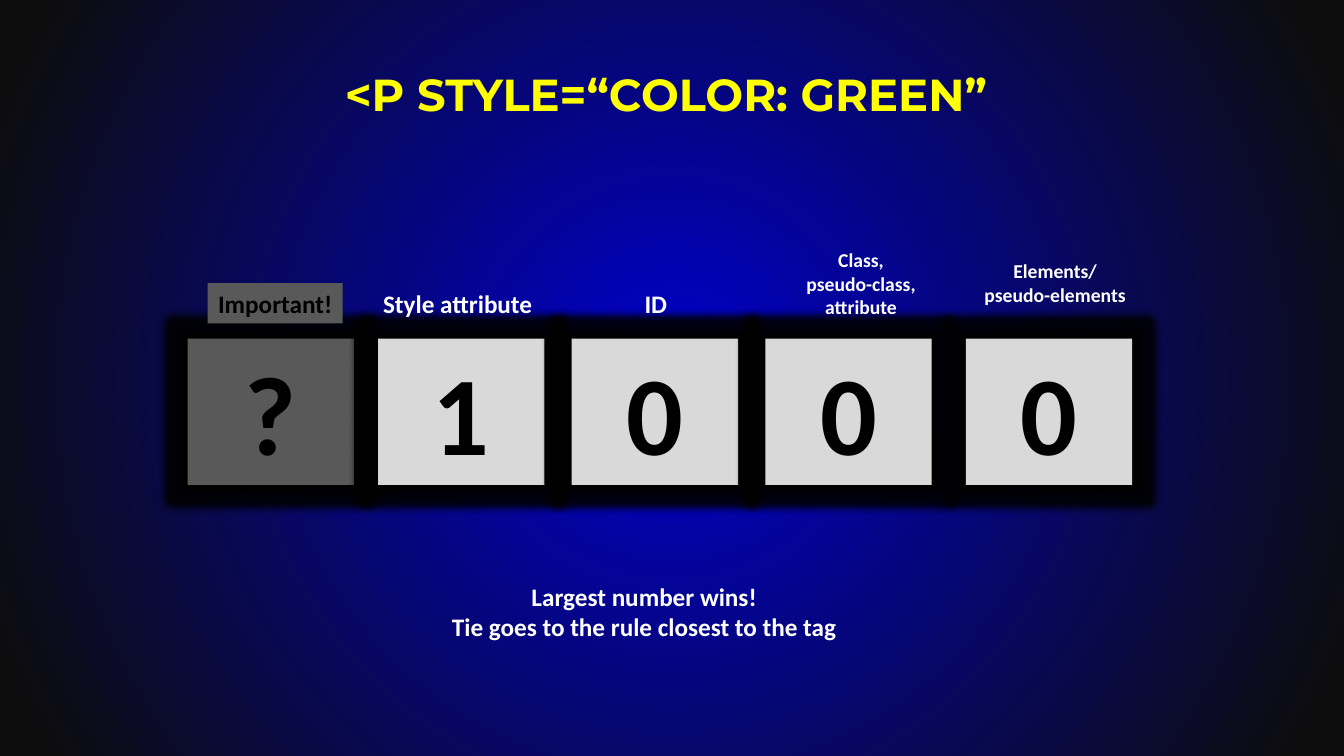
"""Build a slide that scores the specificity of a CSS style attribute."""
from pptx import Presentation
from pptx.dml.color import RGBColor as RGB
from pptx.enum.shapes import MSO_SHAPE as SHAPE
from pptx.enum.text import MSO_ANCHOR as ANCHOR, MSO_AUTO_SIZE as AUTO, PP_ALIGN as ALIGN
from pptx.oxml import parse_xml
from pptx.oxml.ns import nsdecls, qn
from pptx.util import Inches, Pt

WHITE = RGB(255, 255, 255)
BLACK = RGB(0, 0, 0)
YELLOW = RGB(255, 255, 0)
DARK = RGB(0x59, 0x59, 0x59)
LIGHT = RGB(0xD9, 0xD9, 0xD9)

TITLE = "<P STYLE=“COLOR: GREEN” "
RULES = "Largest number wins!\nTie goes to the rule closest to the tag"
BOXES = [("?", 1.86, DARK), ("1", 3.75, LIGHT), ("0", 5.67, LIGHT),
         ("0", 7.59, LIGHT), ("0", 9.58, LIGHT)]
LABELS = [
    ("Important!", (2.06, 2.81, 1.34, 0.4), 18, BLACK, DARK, False),
    ("Style attribute", (3.69, 2.81, 1.7, 0.4), 18, WHITE, None, False),
    ("ID", (6.29, 2.81, 0.43, 0.4), 18, WHITE, None, False),
    ("Class, pseudo-class, attribute", (7.88, 2.41, 1.32, 0.81), 14, WHITE, None, True),
    ("Elements/\npseudo-elements", (9.66, 2.52, 1.61, 0.57), 14, WHITE, None, False),
    (RULES, (4.37, 5.72, 4.04, 0.71), 18, WHITE, None, False),
]
BOX_TOP, BOX_W, BOX_H = 3.36, 1.65, 1.45

BACK = f"""<a:gradFill {nsdecls('a')} rotWithShape="1"><a:gsLst>
<a:gs pos="0"><a:srgbClr val="0000CC"/></a:gs>
<a:gs pos="95000"><a:srgbClr val="0D0D0D"/></a:gs></a:gsLst>
<a:path path="circle"><a:fillToRect l="50000" t="50000" r="50000" b="50000"/></a:path>
</a:gradFill>"""
GLOW = f"""<a:effectLst {nsdecls('a')}><a:glow rad="{Pt(11)}">
<a:srgbClr val="000000"><a:alpha val="90000"/></a:srgbClr></a:glow></a:effectLst>"""


def paint(slide):
    slide.background.fill.solid()
    solid = slide.element.find(".//" + qn("a:solidFill"))
    solid.getparent().replace(solid, parse_xml(BACK))


def write(shape, text, size, color, face="Calibri", wrap=True, anchor=ANCHOR.TOP):
    frame = shape.text_frame
    frame.text = text
    frame.word_wrap = wrap
    frame.vertical_anchor = anchor
    frame.auto_size = AUTO.NONE if anchor == ANCHOR.MIDDLE else AUTO.SHAPE_TO_FIT_TEXT
    for para in frame.paragraphs:
        para.alignment = ALIGN.CENTER
        for run in para.runs:
            font = run.font
            font.name, font.size, font.bold = face, Pt(size), True
            font.color.rgb = color


def add_box(slide, area, fill):
    box = slide.shapes.add_shape(SHAPE.RECTANGLE, *map(Inches, area))
    box.shadow.inherit = False
    box.fill.solid()
    box.fill.fore_color.rgb = fill
    box.line.fill.background()
    return box


def main():
    deck = Presentation()
    deck.slide_width, deck.slide_height = Inches(13.33), Inches(7.5)
    slide = deck.slides.add_slide(deck.slide_layouts[6])
    paint(slide)
    for digit, left, fill in BOXES:
        box = add_box(slide, (left, BOX_TOP, BOX_W, BOX_H), fill)
        props = box.element.spPr
        props.replace(props.find(qn("a:effectLst")), parse_xml(GLOW))
        write(box, digit, 80, BLACK)
    for text, area, size, color, fill, wrap in LABELS:
        if fill is None:
            label = slide.shapes.add_textbox(*map(Inches, area))
        else:
            label = add_box(slide, area, fill)
        write(label, text, size, color, wrap=wrap)
    title = slide.shapes.add_textbox(*map(Inches, (0.67, 0.3, 12, 1.25)))
    write(title, TITLE, 32, YELLOW, "Montserrat", anchor=ANCHOR.MIDDLE)
    deck.save("out.pptx")


if __name__ == "__main__":
    main()
